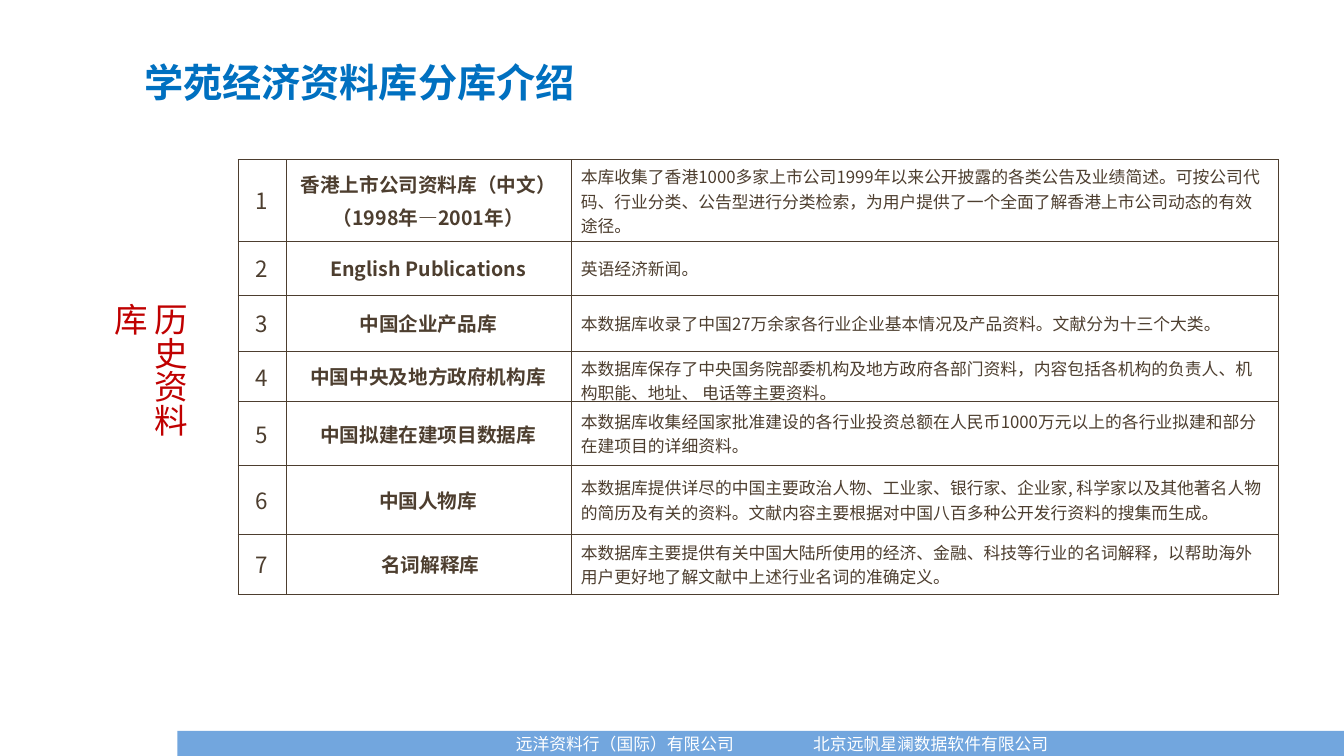
from lxml import etree
from pptx import Presentation
from pptx import util as u
from pptx.dml.color import RGBColor
from pptx.enum import shapes, text
from pptx.oxml.ns import qn

Pt = u.Pt
FONT = "Noto Sans CJK SC"
COLORS = {"title": "0070C0", "history": "C00000", "ink": "4D3E2F",
          "footer": "72A6DE", "white": "FFFFFF"}
COLUMN_WIDTHS = [34.2, 203.6, 505.2]
ROW_HEIGHTS = [58.4, 38.4, 40.2, 34.9, 45.6, 49, 43.2]
DATABASES = [
    (["香港上市公司资料库（中文）", "（1998年—2001年）"],
     "本库收集了香港1000多家上市公司1999年以来公开披露的各类公告及业绩简述。可按公司代码、行业分类、"
     "公告型进行分类检索，为用户提供了一个全面了解香港上市公司动态的有效途径。"),
    (["English Publications"], "英语经济新闻。"),
    (["中国企业产品库"],
     "本数据库收录了中国27万余家各行业企业基本情况及产品资料。文献分为十三个大类。"),
    (["中国中央及地方政府机构库"],
     "本数据库保存了中央国务院部委机构及地方政府各部门资料，内容包括各机构的负责人、机构职能、"
     "地址、 电话等主要资料。"),
    (["中国拟建在建项目数据库"],
     "本数据库收集经国家批准建设的各行业投资总额在人民币1000万元以上的各行业拟建和部分在建项目的详细资料。"),
    (["中国人物库"],
     "本数据库提供详尽的中国主要政治人物、工业家、银行家、企业家, 科学家以及其他著名人物的简历及有关的资料。"
     "文献内容主要根据对中国八百多种公开发行资料的搜集而生成。"),
    ([" 名词解释库"],
     "本数据库主要提供有关中国大陆所使用的经济、金融、科技等行业的名词解释，以帮助海外用户更好地了解"
     "文献中上述行业名词的准确定义。"),
]


def style(paragraph, size, color, bold=False):
    font = paragraph.font
    font.name, font.size, font.bold = FONT, Pt(size), bold
    font.color.rgb = RGBColor.from_string(COLORS[color])
    defaults = paragraph._p.pPr.find(qn("a:defRPr"))
    etree.SubElement(defaults, qn("a:ea")).set("typeface", FONT)


def add_label(slide, box, words, size, color, bold=False):
    frame = slide.shapes.add_textbox(*map(Pt, box)).text_frame
    frame.word_wrap = True
    frame.vertical_anchor = text.MSO_ANCHOR.MIDDLE
    line = frame.paragraphs[0]
    line.text = words
    style(line, size, color, bold)
    return frame


def add_footer(slide, left, top, width, height):
    band = slide.shapes.add_shape(
        shapes.MSO_SHAPE.RECTANGLE, Pt(left), Pt(top), Pt(width), Pt(height))
    band.shadow.inherit = False
    band.fill.solid()
    band.fill.fore_color.rgb = RGBColor.from_string(COLORS["footer"])
    band.line.fill.background()
    companies = add_label(
        slide, (left + 234.7, top - 1.4, 430.6, 21.6),
        "远洋资料行（国际）有限公司\t北京远帆星澜数据软件有限公司", 12, "white")
    properties = companies.paragraphs[0]._p.pPr
    tabs = etree.Element(qn("a:tabLst"))
    etree.SubElement(tabs, qn("a:tab"), pos=str(Pt(212.4)), algn="l")
    properties.insert(0, tabs)


def add_history(slide, box):
    frame = add_label(slide, box, "历史资料库", 24, "history")
    frame.vertical_anchor = text.MSO_ANCHOR.TOP
    frame.auto_size = text.MSO_AUTO_SIZE.SHAPE_TO_FIT_TEXT
    frame._txBody.bodyPr.set("vert", "eaVert")


def add_borders(cell):
    properties = cell._tc.get_or_add_tcPr()
    for position, side in enumerate(("lnL", "lnR", "lnT", "lnB")):
        border = etree.Element(qn("a:" + side), w=str(Pt(0.25)))
        fill = etree.SubElement(border, qn("a:solidFill"))
        etree.SubElement(fill, qn("a:srgbClr"), val=COLORS["ink"])
        properties.insert(position, border)


def fill_cell(cell, lines, size, bold, align):
    cell.fill.background()
    add_borders(cell)
    cell.vertical_anchor = text.MSO_ANCHOR.MIDDLE
    cell.text = "\n".join(lines)
    for line in cell.text_frame.paragraphs:
        line.alignment = align
        line.space_before = Pt(size * 0.2)
        style(line, size, "ink", bold)


def add_databases(slide, left, top, width, height):
    table = slide.shapes.add_table(
        len(DATABASES), len(COLUMN_WIDTHS), Pt(left), Pt(top), Pt(width), Pt(height)).table
    table.first_row = table.horz_banding = False
    for column, column_width in zip(table.columns, COLUMN_WIDTHS):
        column.width = Pt(column_width)
    for row, row_height in zip(table.rows, ROW_HEIGHTS):
        row.height = Pt(row_height)
    center, left_align = text.PP_ALIGN.CENTER, text.PP_ALIGN.LEFT
    for number, (name, summary) in enumerate(DATABASES, 1):
        index_cell, name_cell, summary_cell = table.rows[number - 1].cells
        fill_cell(index_cell, [str(number)], 16, False, center)
        fill_cell(name_cell, name, 14, True, center)
        fill_cell(summary_cell, [summary], 12, False, left_align)


def main():
    deck = Presentation()
    deck.slide_width, deck.slide_height = Pt(960), Pt(540)
    slide = deck.slides.add_slide(deck.slide_layouts[6])
    add_footer(slide, 126.7, 522, 833.3, 18)
    add_label(slide, (95.8, 40.2, 326.2, 36), "学苑经济资料库分库介绍", 28, "title", True)
    add_databases(slide, 169.9, 113.8, 743, 311.8)
    add_history(slide, (95.8, 209.5, 43.9, 130.3))
    deck.save("out.pptx")


if __name__ == "__main__":
    main()
